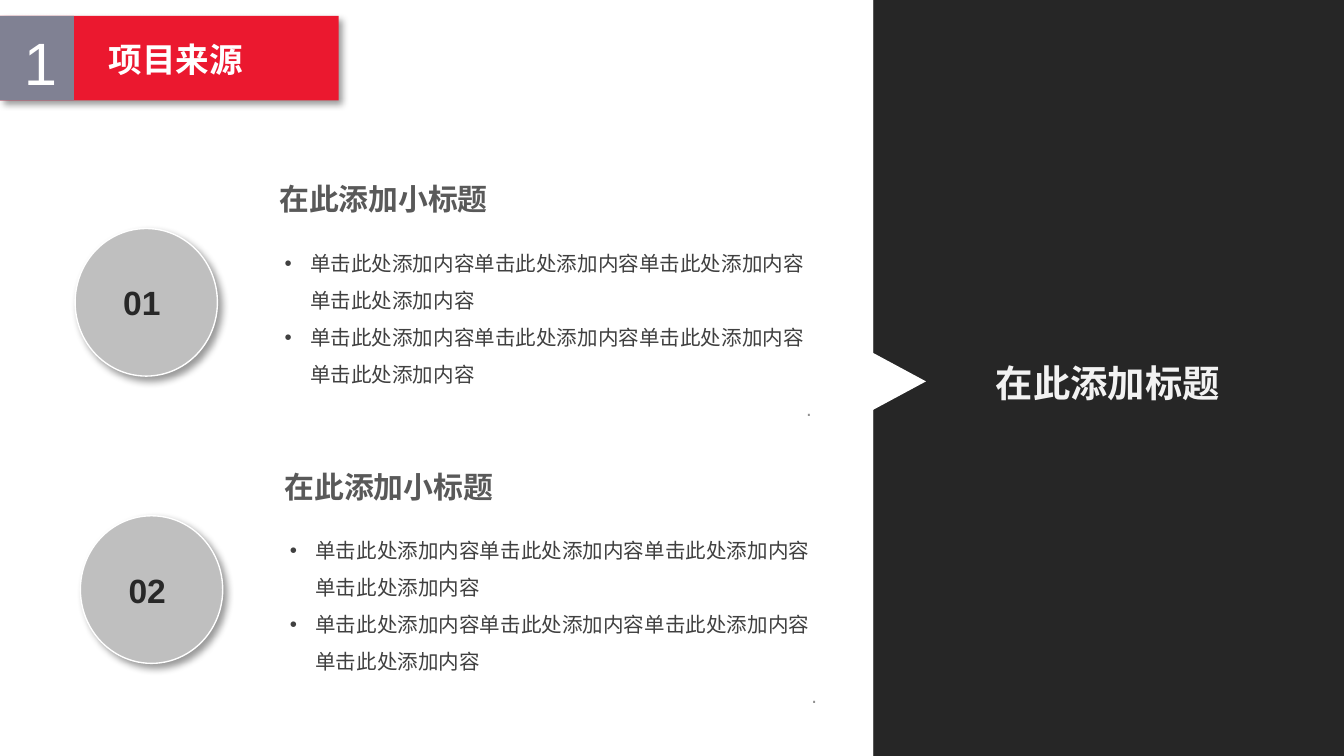
from dataclasses import dataclass

from lxml import etree
from pptx import Presentation
from pptx import util as u
from pptx.dml.color import RGBColor
from pptx.enum import lang, shapes, text
from pptx.oxml import ns

Cm, Pt = u.Cm, u.Pt


@dataclass(frozen=True)
class Theme:
    font: str = "Arial"
    white: str = "FFFFFF"
    dark: str = "262626"
    red: str = "EB182F"
    slate: str = "808193"
    disc: str = "BFBFBF"
    number: str = "282828"
    heading: str = "595959"
    body: str = "404040"
    dot: str = "909090"
    title: str = "F2F2F2"
    chapter_size: int = 32
    title_size: int = 20
    label_size: int = 18
    heading_size: int = 16
    body_size: int = 11


THEME = Theme()
SLIDE_WIDTH, SLIDE_HEIGHT = 25.4, 14.29
PANEL_LEFT = 16.51
SECTION_STEP = (0.1, 5.43)
BULLET_INDENT = Cm(0.48)
BULLET_TEXT = "单击此处添加内容" * 4


def lengths(*values):
    return [Cm(value) for value in values]


def add_shadow(shape):
    """Give the shape a soft shadow to the lower right."""
    effects = etree.SubElement(shape._element.spPr, ns.qn("a:effectLst"))
    shadow = etree.SubElement(effects, ns.qn("a:outerShdw"), blurRad=str(Pt(4)),
                              dist=str(Pt(3)), dir=str(45 * 60000),
                              algn="tl", rotWithShape="0")
    color = etree.SubElement(shadow, ns.qn("a:srgbClr"), val="000000")
    etree.SubElement(color, ns.qn("a:alpha"), val="40000")


def add_block(page, kind, bounds, fill, line=None, shadow=False, rotation=0):
    shape = page.shapes.add_shape(kind, *lengths(*bounds))
    shape.rotation = rotation
    shape.fill.solid()
    shape.fill.fore_color.rgb = RGBColor.from_string(fill)
    if line:
        shape.line.color.rgb = RGBColor.from_string(line)
        shape.line.width = Pt(0.75)
    else:
        shape.line.fill.background()
    if shadow:
        add_shadow(shape)
    else:
        shape.shadow.inherit = False


def write(para, words, *, size, color, bold=False):
    span = para.add_run()
    span.text = words
    font = span.font
    font.size, font.bold, font.name = Pt(size), bold, THEME.font
    font.color.rgb = RGBColor.from_string(color)
    font.language_id = lang.MSO_LANGUAGE_ID.SIMPLIFIED_CHINESE
    latin = font._element.find(ns.qn("a:latin"))
    latin.addnext(etree.Element(ns.qn("a:ea"), typeface=THEME.font))


def add_frame(page, bounds, anchor=text.MSO_ANCHOR.TOP):
    frame = page.shapes.add_textbox(*lengths(*bounds)).text_frame
    frame.word_wrap = True
    frame.vertical_anchor = anchor
    return frame


def add_label(page, bounds, words, anchor=text.MSO_ANCHOR.TOP, **style):
    write(add_frame(page, bounds, anchor).paragraphs[0], words, **style)


def make_bullet(para):
    props = para._p.get_or_add_pPr()
    props.set("marL", str(BULLET_INDENT))
    props.set("indent", str(-BULLET_INDENT))
    etree.SubElement(props, ns.qn("a:buFont"), typeface=THEME.font)
    etree.SubElement(props, ns.qn("a:buChar"), char="•")


def add_details(page, bounds):
    """Add two bullets, closed by a small dot at the right."""
    frame = add_frame(page, bounds)
    for para in (frame.paragraphs[0], frame.add_paragraph()):
        para.line_spacing = 1.5
        make_bullet(para)
        write(para, BULLET_TEXT, size=THEME.body_size, color=THEME.body)
    ending = frame.add_paragraph()
    ending.alignment = text.PP_ALIGN.RIGHT
    ending.line_spacing = Pt(18)
    write(ending, ". ", size=THEME.body_size, color=THEME.dot)


def add_section(page, index):
    dx, dy = (step * index for step in SECTION_STEP)
    add_block(page, shapes.MSO_SHAPE.OVAL, (1.42 + dx, 4.32 + dy, 2.69, 2.79),
              THEME.disc, line=THEME.white, shadow=True)
    add_label(page, (2.08 + dx, 5.21 + dy, 1.4, 1.02), f"{index + 1:02}",
              size=THEME.label_size, color=THEME.number, bold=True)
    add_label(page, (5.03 + dx, 3.3 + dy, 5.28, 0.94), "在此添加小标题",
              size=THEME.heading_size, color=THEME.heading, bold=True)
    add_details(page, (5.13 + dx, 4.39 + dy, 10.57, 3.71))


def add_banner(page):
    rectangle = shapes.MSO_SHAPE.RECTANGLE
    add_block(page, rectangle, (0, 0.3, 6.4, 1.6), THEME.red, shadow=True)
    add_label(page, (1.8, 0.36, 4.19, 1.5), "项目来源", text.MSO_ANCHOR.MIDDLE,
              size=THEME.label_size, color=THEME.white, bold=True)
    add_block(page, rectangle, (0, 0.3, 1.4, 1.6), THEME.slate)
    add_label(page, (0.2, 0.36, 1.4, 1.63), "1",
              size=THEME.chapter_size, color=THEME.white)


def add_title_panel(page):
    add_block(page, shapes.MSO_SHAPE.RECTANGLE,
              (PANEL_LEFT, 0, SLIDE_WIDTH - PANEL_LEFT, SLIDE_HEIGHT), THEME.dark)
    add_block(page, shapes.MSO_SHAPE.ISOSCELES_TRIANGLE, (16.15, 6.56, 1.4, 1.3),
              THEME.white, rotation=90)
    add_label(page, (18.57, 6.68, 5.28, 1.12), "在此添加标题",
              size=THEME.title_size, color=THEME.title, bold=True)


def main():
    deck = Presentation()
    deck.slide_width, deck.slide_height = lengths(SLIDE_WIDTH, SLIDE_HEIGHT)
    page = deck.slides.add_slide(deck.slide_layouts[6])
    page.background.fill.solid()
    page.background.fill.fore_color.rgb = RGBColor.from_string(THEME.dark)
    add_block(page, shapes.MSO_SHAPE.RECTANGLE,
              (0, 0, PANEL_LEFT, SLIDE_HEIGHT), THEME.white)
    add_banner(page)
    for index in range(2):
        add_section(page, index)
    add_title_panel(page)
    deck.save("out.pptx")


if __name__ == "__main__":
    main()
